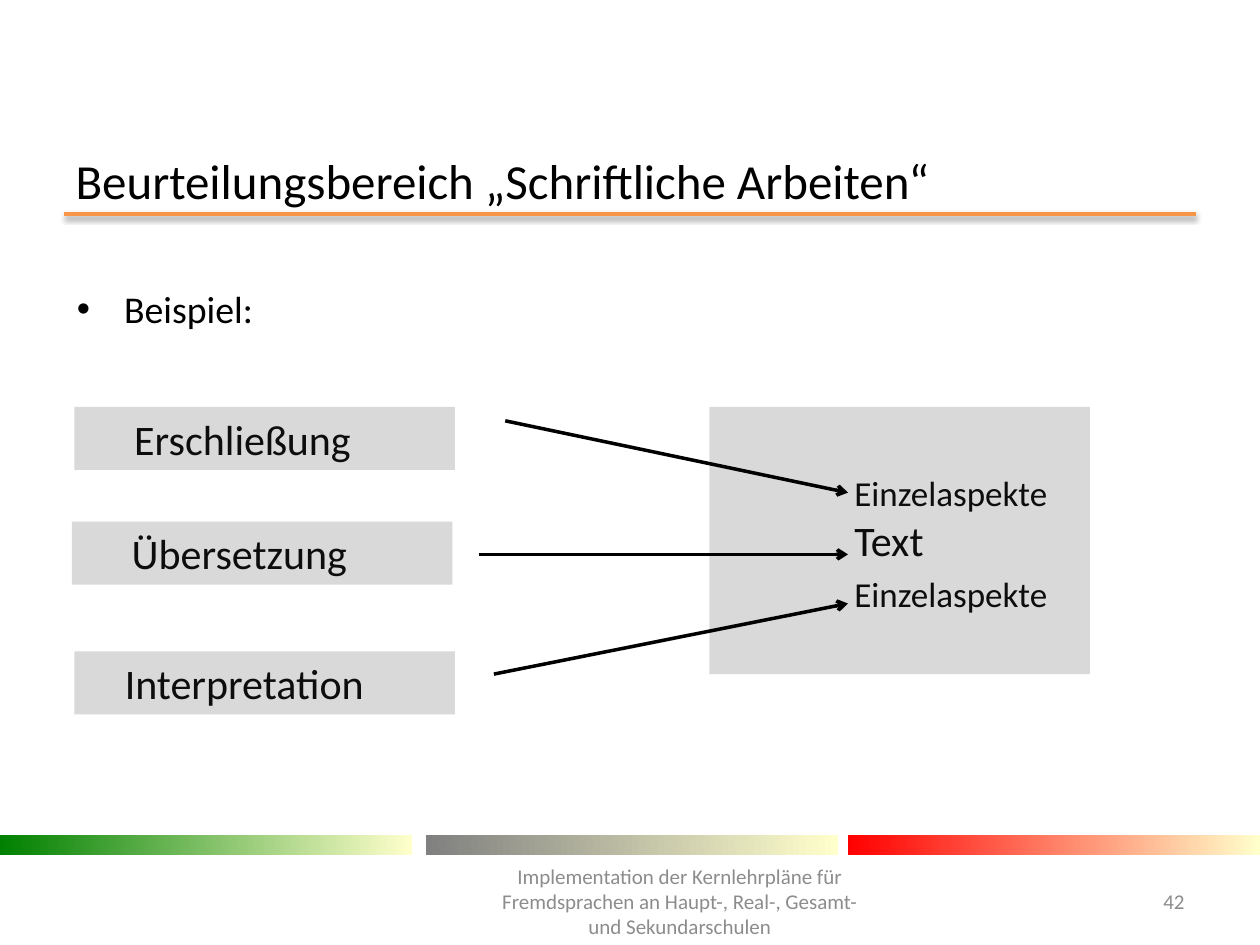
from lxml import etree
from pptx import Presentation
from pptx.dml.color import RGBColor
from pptx.enum.shapes import MSO_CONNECTOR, MSO_SHAPE
from pptx.enum.text import MSO_ANCHOR, MSO_AUTO_SIZE, PP_ALIGN
from pptx.oxml.ns import qn
from pptx.util import Inches, Pt

RECT = MSO_SHAPE.RECTANGLE
LINE = MSO_CONNECTOR.STRAIGHT
MID, TOP = MSO_ANCHOR.MIDDLE, MSO_ANCHOR.TOP
LEFT, MIDDLE, RIGHT = PP_ALIGN.LEFT, PP_ALIGN.CENTER, PP_ALIGN.RIGHT
FIXED = MSO_AUTO_SIZE.NONE

COLORS = {
    "white": "FFFFFF", "black": "000000", "ink": "0D0D0D",
    "panel": "D9D9D9", "foot": "8C8C8C", "rule": "F79646",
    "green": "008000", "gray": "808080", "red": "FF0000", "cream": "FFFFCC",
}
FONT = "Calibri"
COLS, ROWS = 100, 75     # grid cells across and down the slide
CELL = Inches(0.1)
PAD = 0.1                # side inset of a text frame, inches
STEP = 0.075             # one indent step, inches


def grid(*cells):
    return [round(cell * CELL) for cell in cells]


def color(name):
    return RGBColor.from_string(COLORS[name])


def style(para, size, ink, align=LEFT):
    para.alignment = align
    para.font.name = FONT
    para.font.size = Pt(size)
    para.font.color.rgb = color(ink)


def write(shape, lines, ink, align=LEFT, anchor=TOP, steps=0):
    """Fill a shape with (text, size) lines; return the paragraphs."""
    frame = shape.text_frame
    frame.word_wrap = True
    frame.auto_size = FIXED
    frame.vertical_anchor = anchor
    frame.margin_left = Inches(PAD + steps * STEP)
    frame.text = "\n".join(text for text, _ in lines)
    for para, (_, size) in zip(frame.paragraphs, lines):
        style(para, size, ink, align)
    return frame.paragraphs


def place(shape, *cells):
    shape.left, shape.top, shape.width, shape.height = grid(*cells)


def box(slide, cells, fill=None):
    shape = slide.shapes.add_shape(RECT, *grid(*cells))
    shape.shadow.inherit = False
    shape.line.fill.background()
    if fill:
        shape.fill.solid()
        shape.fill.fore_color.rgb = color(fill)
    return shape


def band(slide, cells, start):
    shape = box(slide, cells)
    shape.fill.gradient()
    shape.fill.gradient_angle = 0
    for stop, name in zip(shape.fill.gradient_stops, (start, "cream")):
        stop.color.rgb = color(name)


def stroke(slide, cells, ink):
    """Draw a line; return it with its empty effect list."""
    line = slide.shapes.add_connector(LINE, *grid(*cells))
    line.line.color.rgb = color(ink)
    line.line.width = Pt(2)
    effect = etree.SubElement(line._element.spPr, qn("a:effectLst"))
    return line, effect


def arrow(slide, cells):
    line, _ = stroke(slide, cells, "black")
    etree.SubElement(line.line._get_or_add_ln(), qn("a:tailEnd"), type="arrow")


def rule(slide, cells):
    _, effect = stroke(slide, cells, "rule")
    shade = etree.SubElement(effect, qn("a:outerShdw"), blurRad=str(Pt(3.1)),
                             dist=str(Pt(1.6)), dir="5400000", rotWithShape="0")
    tint = etree.SubElement(shade, qn("a:srgbClr"), val=COLORS["black"])
    etree.SubElement(tint, qn("a:alpha"), val="38000")


def label(slide, cells, text, align):
    shape = slide.shapes.add_textbox(*grid(*cells))
    write(shape, [(text, 12)], "foot", align, MID)


def heads(slide):
    title, body = slide.placeholders
    place(title, 5, 12.3, 90, 3.9)
    write(title, [("Beurteilungsbereich „Schriftliche Arbeiten“", 28)],
          "black", anchor=MID)

    place(body, 5.1, 19.4, 90, 44.9)
    body.fill.solid()
    body.fill.fore_color.rgb = color("white")
    body.text_frame.margin_top = Inches(0.4)
    props = body.text_frame.paragraphs[0]._p.get_or_add_pPr()
    props.set("marL", "0")
    props.set("indent", "0")
    etree.SubElement(props, qn("a:buNone"))
    para = write(body, [("Beispiel:", 21.6)], "black")[0]
    para.line_spacing = 0.8
    para.space_before = Pt(0)


def diagram(slide):
    # Target panel
    panel = box(slide, (56.3, 32.3, 30.2, 21.2), "panel")
    panel.text_frame.margin_top = Inches(0.51)
    lines = [("Einzelaspekte", 20), ("Text", 24), ("Einzelaspekte", 20)]
    paras = write(panel, lines, "ink", steps=14)
    paras[0].space_after = Pt(1)
    paras[2].space_before = Pt(4)

    # Task boxes: text, left, top, indent steps, arrow start and end
    tasks = [
        ("Erschließung", 5.9, 32.3, 5, (40.1, 33.4), 39.1),
        ("Übersetzung", 5.7, 41.4, 5, (38, 44), 44),
        ("Interpretation", 5.9, 51.7, 4, (39.2, 53.5), 47.9),
    ]
    for text, left, top, steps, start, end in tasks:
        task = box(slide, (left, top, 30.2, 5), "panel")
        write(task, [(text, 24)], "ink", steps=steps)
        arrow(slide, (*start, 67.3, end))


def footer(slide):
    wide = 32.7
    for left, start in ((0, "green"), (33.8, "gray"), (COLS - wide, "red")):
        band(slide, (left, 66.3, wide, 1.6), start)
    label(slide, (38.2, 69.5, 31.5, 4),
          "Implementation der Kernlehrpläne für Fremdsprachen an "
          "Haupt-, Real-, Gesamt- und Sekundarschulen", MIDDLE)
    label(slide, (88.6, 69.5, 6.4, 4), "42", RIGHT)


def main():
    deck = Presentation()
    deck.slide_width, deck.slide_height = grid(COLS, ROWS)
    slide = deck.slides.add_slide(deck.slide_layouts[1])
    heads(slide)
    rule(slide, (5.1, 17, 94.9, 17))
    diagram(slide)
    footer(slide)
    deck.save("out.pptx")


if __name__ == "__main__":
    main()
